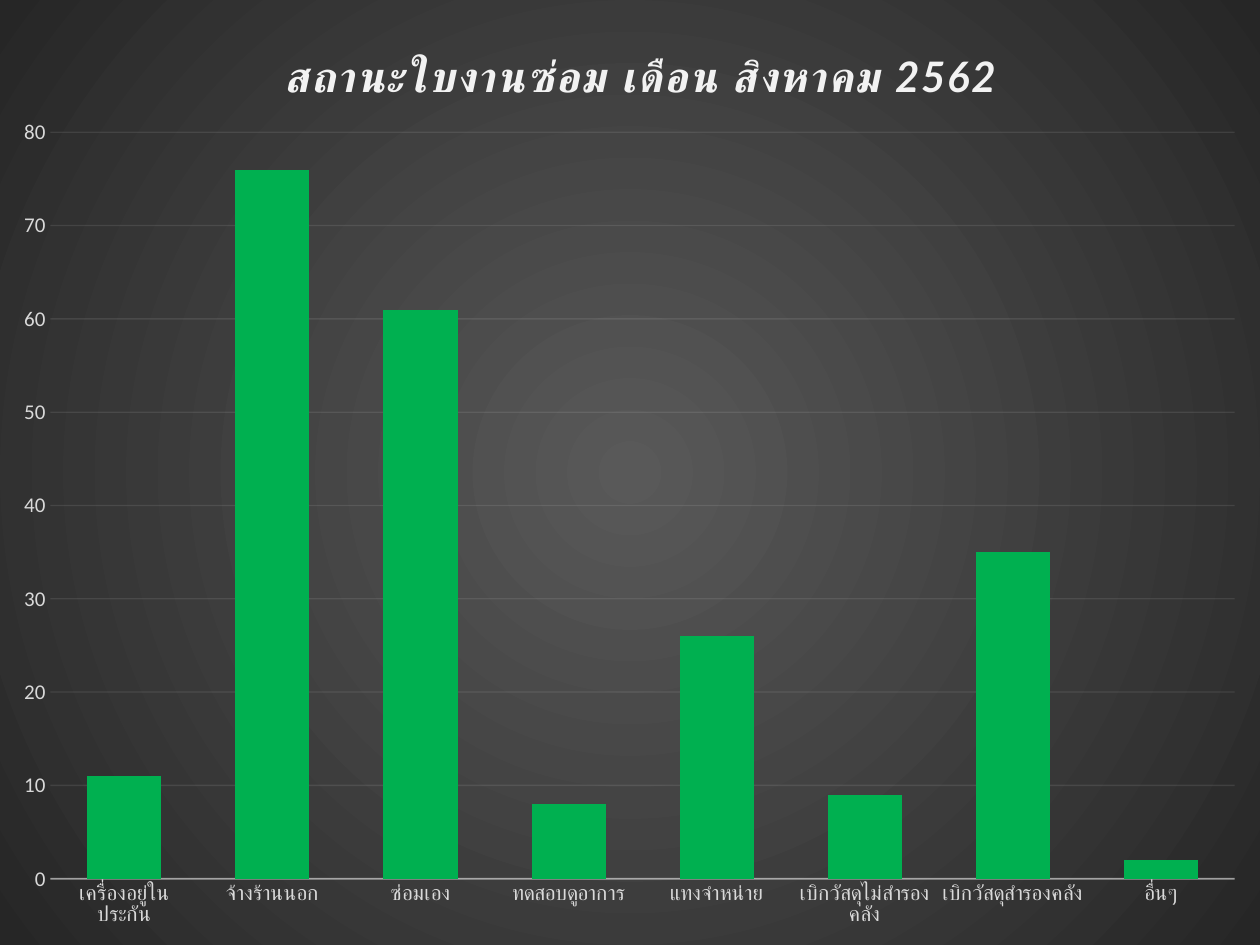
from lxml.etree import SubElement
from pptx import Presentation
from pptx.chart.data import CategoryChartData
from pptx.dml.color import RGBColor
from pptx.enum.chart import XL_CHART_TYPE, XL_TICK_MARK
from pptx.oxml import parse_xml
from pptx.oxml.ns import nsdecls, qn
from pptx.util import Inches, Pt

TITLE = "สถานะใบงานซ่อม เดือน สิงหาคม 2562"
JOBS = [
    ("เครื่องอยู่ในประกัน", 11),
    ("จ้างร้านนอก", 76),
    ("ซ่อมเอง", 61),
    ("ทดสอบดูอาการ", 8),
    ("แทงจำหน่าย", 26),
    ("เบิกวัสดุไม่สำรองคลัง", 9),
    ("เบิกวัสดุสำรองคลัง", 35),
    ("อื่นๆ", 2),
]
THEME = {
    "title_font": "Lato", "title_size": 24, "title_spacing": 100,
    "axis_font": "Calibri", "axis_size": 12,
    "light": "F2F2F2", "label": "D9D9D9", "bar": "00B050",
    "centre": "595959", "edge": "262626",
}
WIDTH, HEIGHT = Inches(10), Inches(7.5)
TITLE_PLACE = {"x": 0.22, "y": 0.04}
PLOT_PLACE = {"x": 0.04, "y": 0.14, "w": 0.94, "h": 0.79}


def style_font(font, name, size, color):
    font.name, font.size = name, Pt(size)
    font.color.rgb = RGBColor.from_string(color)


def style_line(line, width, opacity):
    line.width = Pt(width)
    line.color.rgb = RGBColor.from_string(THEME["light"])
    color = line.fill._xPr.find(".//" + qn("a:srgbClr"))
    SubElement(color, qn("a:alpha"), val=str(opacity * 1000))


def place(element, position, inner=False):
    """Give a chart part a manual layout, in fractions of the chart."""
    target = '<c:layoutTarget val="inner"/>' if inner else ""
    modes = "".join(f'<c:{key}Mode val="edge"/>' for key in "xy")
    values = "".join(f'<c:{key} val="{value}"/>' for key, value in position.items())
    layout = parse_xml(
        f'<c:layout {nsdecls("c")}><c:manualLayout>{target}{modes}{values}'
        "</c:manualLayout></c:layout>"
    )
    for old in element.findall(qn("c:layout")):
        element.remove(old)
    text = element.find(qn("c:tx"))
    if text is None:
        element.insert(0, layout)
    else:
        text.addnext(layout)


def fill_background(chart):
    stops = "".join(
        f'<a:gs pos="{position}"><a:srgbClr val="{THEME[name]}"/></a:gs>'
        for position, name in ((0, "centre"), (100000, "edge"))
    )
    fill = parse_xml(
        f'<c:spPr {nsdecls("c", "a")}><a:gradFill><a:gsLst>{stops}</a:gsLst>'
        '<a:path path="circle"><a:fillToRect l="50000" t="50000" r="50000" b="50000"/>'
        "</a:path></a:gradFill><a:ln><a:noFill/></a:ln></c:spPr>"
    )
    chart._chartSpace.find(qn("c:chart")).addnext(fill)


def add_title(chart):
    chart.has_title = True
    title = chart.chart_title
    title.include_in_layout = False
    title.text_frame.text = TITLE
    span = title.text_frame.paragraphs[0].runs[0]
    style_font(span.font, THEME["title_font"], THEME["title_size"], THEME["light"])
    span.font.bold = span.font.italic = True
    span.font._element.set("spc", str(THEME["title_spacing"]))
    place(title._element, TITLE_PLACE)


def style_axes(chart):
    for axis in (chart.category_axis, chart.value_axis):
        axis.major_tick_mark = axis.minor_tick_mark = XL_TICK_MARK.NONE
        style_font(axis.tick_labels.font, THEME["axis_font"],
                   THEME["axis_size"], THEME["label"])
    style_line(chart.category_axis.format.line, 1, 54)
    values = chart.value_axis
    values.minimum_scale, values.maximum_scale, values.major_unit = 0, 80, 10
    values.format.line.fill.background()
    values.has_major_gridlines = True
    style_line(values.major_gridlines.format.line, 0.75, 10)


def main():
    deck = Presentation()
    deck.slide_width, deck.slide_height = WIDTH, HEIGHT
    page = deck.slides.add_slide(deck.slide_layouts[6])

    data = CategoryChartData()
    data.categories = [name for name, count in JOBS]
    data.add_series("Series 1", [count for name, count in JOBS])
    chart = page.shapes.add_chart(
        XL_CHART_TYPE.COLUMN_CLUSTERED, 0, 0, WIDTH, HEIGHT, data
    ).chart
    chart.has_legend = False
    style_font(chart.font, THEME["axis_font"], 10, "000000")
    fill_background(chart)
    add_title(chart)
    style_axes(chart)
    place(chart._chartSpace.find(".//" + qn("c:plotArea")), PLOT_PLACE, inner=True)

    plot = chart.plots[0]
    plot.gap_width, plot.overlap = 100, -24
    plot.vary_by_categories = False
    bars = plot.series[0].format.fill
    bars.solid()
    bars.fore_color.rgb = RGBColor.from_string(THEME["bar"])
    deck.save("out.pptx")


if __name__ == "__main__":
    main()
